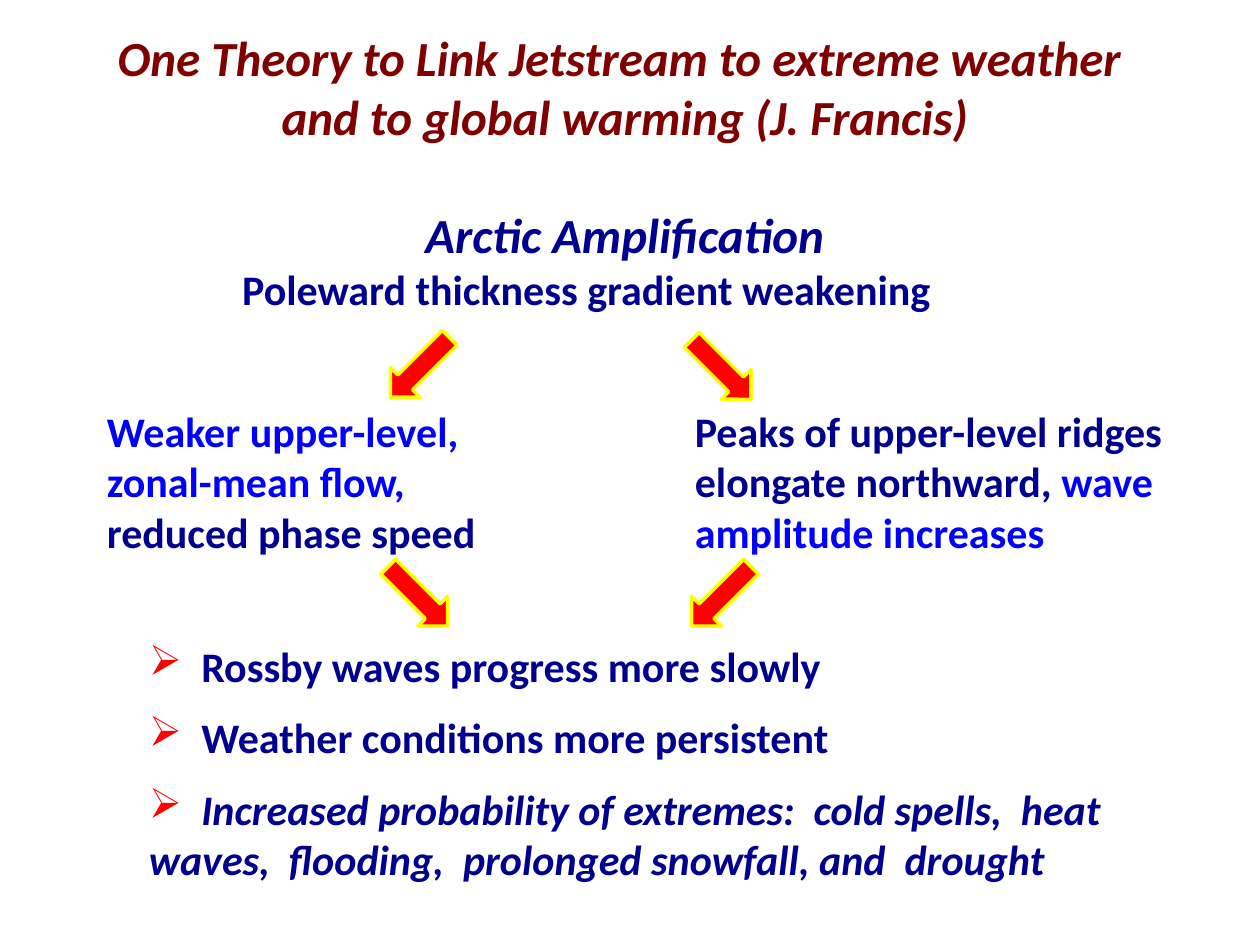
from dataclasses import dataclass

from lxml import etree
from pptx import Presentation
from pptx import util as u
from pptx.dml.color import RGBColor
from pptx.enum import shapes, text
from pptx.oxml.ns import qn


@dataclass(frozen=True)
class Theme:
    font: str = "Calibri"
    title: str = "800000"
    navy: str = "000090"
    blue: str = "0000FF"
    red: str = "FF0000"
    yellow: str = "FFFF00"
    large: int = 28
    body: int = 24


@dataclass(frozen=True)
class Box:
    """Place on the grid of twelfths of an inch: 120 columns by 90 rows."""
    col: float
    row: float
    cols: float
    rows: float

    def emu(self) -> list[int]:
        return [u.Inches(n / 12) for n in (self.col, self.row, self.cols, self.rows)]


@dataclass(frozen=True)
class Arrow:
    col: float
    row: float
    angle: int


T = Theme()
TITLE = Box(10, 2, 99, 28.7)
LEFT = Box(9, 38, 43, 15.7)
RIGHT = Box(65, 38, 49, 15.7)
OUTCOMES = Box(13, 60.4, 100, 24.6)
ARROWS = [
    Arrow(38, 31, 45),
    Arrow(66.7, 31.2, 315),
    Arrow(37.8, 52.8, 315),
    Arrow(66.7, 52.8, 45),
]


def add_box(s, box: Box):
    tf = s.shapes.add_textbox(*box.emu()).text_frame
    tf.word_wrap = True
    return tf


def add_paragraph(tf, *, align=None, after=0, indent=0, bullet=None):
    """Use the empty first paragraph, or append one."""
    first = tf.paragraphs[0]
    p = tf.add_paragraph() if first.runs else first
    p.alignment = align
    p.space_after = u.Pt(after)
    pr = p._p.get_or_add_pPr()
    pr.set("marL", str(u.Inches(indent)))
    pr.set("indent", "0")
    if bullet:
        color = etree.SubElement(pr, qn("a:buClr"))
        etree.SubElement(color, qn("a:srgbClr"), val=T.red)
        etree.SubElement(pr, qn("a:buChar"), char=bullet)
    return p


def add_text(p, words: str, *, size=T.body, color=T.navy, italic=False):
    r = p.add_run()
    r.text = words
    f = r.font
    f.name, f.size, f.bold, f.italic = T.font, u.Pt(size), True, italic
    f.color.rgb = RGBColor.from_string(color)


def add_arrow(s, arrow: Arrow):
    box = Box(arrow.col, arrow.row, 4, 8)
    sp = s.shapes.add_shape(shapes.MSO_SHAPE.DOWN_ARROW, *box.emu())
    sp.rotation = arrow.angle
    sp.shadow.inherit = False
    sp.fill.solid()
    sp.fill.fore_color.rgb = RGBColor.from_string(T.red)
    sp.line.color.rgb = RGBColor.from_string(T.yellow)
    sp.line.width = u.Pt(2)


def main():
    prs = Presentation()
    prs.slide_width, prs.slide_height = u.Inches(10), u.Inches(7.5)
    s = prs.slides.add_slide(prs.slide_layouts[6])
    center = text.PP_ALIGN.CENTER

    tf = add_box(s, TITLE)
    p = add_paragraph(tf, align=center, after=34)
    add_text(p, "One Theory to Link Jetstream to extreme weather  and to global warming (J. Francis)",
             size=T.large, color=T.title, italic=True)
    p = add_paragraph(tf, align=center)
    add_text(p, "Arctic Amplification", size=T.large, italic=True)
    p = add_paragraph(tf, indent=0.99)
    add_text(p, "Poleward thickness gradient weakening")

    p = add_paragraph(add_box(s, LEFT))
    add_text(p, "Weaker upper-level, zonal-mean flow, ", color=T.blue)
    add_text(p, "reduced phase speed")

    p = add_paragraph(add_box(s, RIGHT))
    add_text(p, "Peaks of upper-level ridges elongate northward, ")
    add_text(p, "wave amplitude increases", color=T.blue)

    tf = add_box(s, OUTCOMES)
    for words, italic in [
        ("Rossby waves progress more slowly", False),
        ("Weather conditions more persistent", False),
        ("Increased probability of extremes:  cold spells,  heat waves,  "
         "flooding,  prolonged snowfall, and  drought", True),
    ]:
        p = add_paragraph(tf, after=12, bullet="➢")
        add_text(p, "  ")
        add_text(p, words, italic=italic)

    for arrow in ARROWS:
        add_arrow(s, arrow)

    prs.save("out.pptx")


if __name__ == "__main__":
    main()
